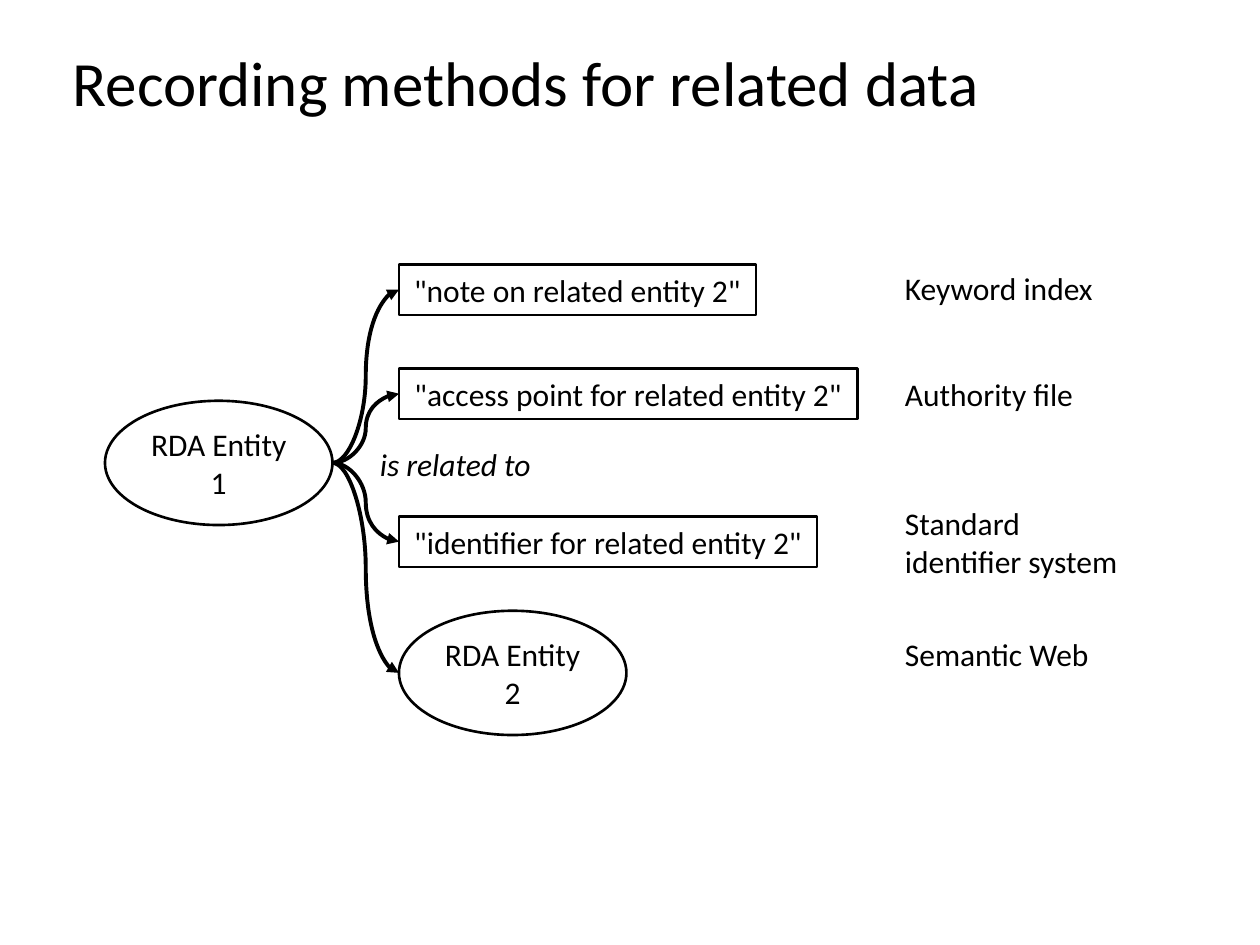
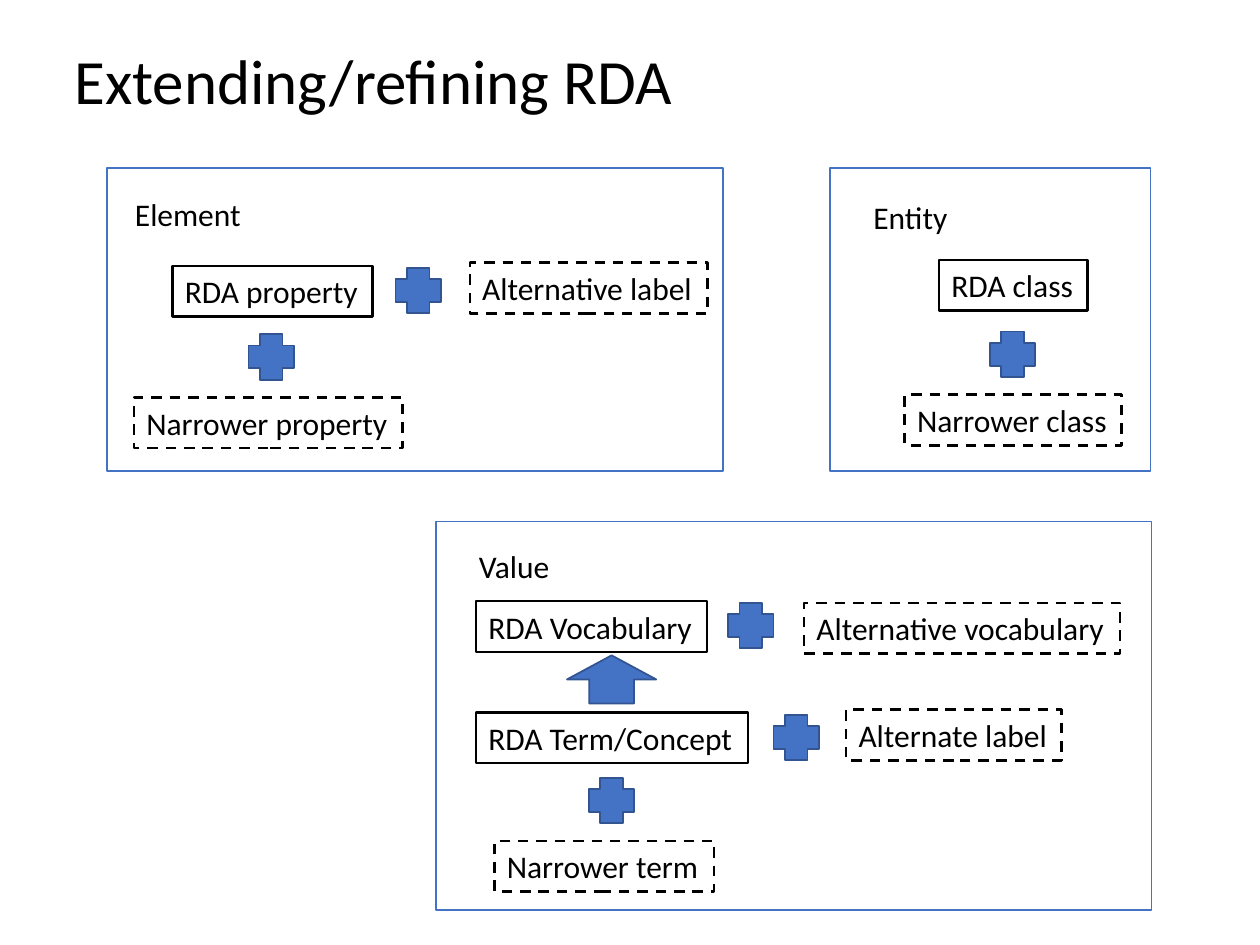
from pptx import Presentation
from pptx.dml.color import RGBColor
from pptx.enum.dml import MSO_LINE_DASH_STYLE as DASH
from pptx.enum.shapes import MSO_CONNECTOR as CONNECTOR, MSO_SHAPE as SHAPE
from pptx.enum.text import MSO_ANCHOR as ANCHOR, MSO_AUTO_SIZE as AUTO_SIZE, PP_ALIGN as ALIGN
from pptx.oxml.ns import qn
from pptx.util import Pt
from lxml.etree import SubElement

COLORS = {"ink": "000000", "accent": "4472C4", "accent_edge": "325491"}
FONT = "Calibri"
LABEL_HEIGHT = 29
PLUS_SIZE = 26


def color(name):
    return RGBColor.from_string(COLORS[name])


def write(shape, text, size=18, align=ALIGN.LEFT, italic=False, wrap=False):
    frame = shape.text_frame
    frame.word_wrap = wrap
    frame.auto_size = AUTO_SIZE.SHAPE_TO_FIT_TEXT
    frame.text = text
    for paragraph in frame.paragraphs:
        paragraph.alignment = align
        font = paragraph.runs[0].font
        font.name, font.size, font.italic = FONT, Pt(size), italic
        font.color.rgb = color("ink")


def add_text(shapes, text, left, top, width, height=LABEL_HEIGHT, **style):
    box = shapes.add_textbox(Pt(left), Pt(top), Pt(width), Pt(height))
    write(box, text, **style)


def add_outline(shapes, kind, box, line="ink", weight=1.5, fill=None):
    shape = shapes.add_shape(kind, *map(Pt, box))
    shape.shadow.inherit = False
    if fill:
        shape.fill.solid()
        shape.fill.fore_color.rgb = color(fill)
    else:
        shape.fill.background()
    shape.line.color.rgb = color(line)
    shape.line.width = Pt(weight)
    return shape


def add_label(shapes, text, left, top, width, dashed=False, align=ALIGN.LEFT):
    label = add_outline(shapes, SHAPE.RECTANGLE, (left, top, width, LABEL_HEIGHT))
    label.text_frame.vertical_anchor = ANCHOR.MIDDLE
    if dashed:
        label.line.dash_style = DASH.DASH
    write(label, text, align=align)
    return label


def add_entity(shapes, number, left, top, width=130, height=71):
    entity = add_outline(shapes, SHAPE.OVAL, (left, top, width, height))
    entity.text_frame.vertical_anchor = ANCHOR.MIDDLE
    write(entity, f"RDA Entity\n{number}", align=ALIGN.CENTER)
    return entity


def add_relation(shapes, start, end):
    relation = shapes.add_connector(CONNECTOR.CURVE, *map(Pt, start + end))
    relation.line.color.rgb = color("ink")
    relation.line.width = Pt(2.25)
    SubElement(relation.line._get_or_add_ln(), qn("a:tailEnd"), type="triangle")
    SubElement(relation._element.spPr, qn("a:effectLst"))


def add_titled_slide(deck, title, left, top, width):
    slide = deck.slides.add_slide(deck.slide_layouts[6])
    add_text(slide.shapes, title, left, top, width, 51, size=36)
    return slide.shapes


def add_relation_diagram(shapes, left, top):
    """Entity 1 on the left, fanning out to four ways of recording entity 2."""
    target_left = left + 168
    source = (left + 130, top + 113.5)

    # Entities
    add_entity(shapes, 1, left, top + 78)
    add_entity(shapes, 2, target_left, top + 198)
    add_relation(shapes, source, (target_left, top + 233.5))
    add_text(shapes, "is related to", left + 150, top + 99.5, 101, italic=True)

    # Recorded strings
    for text, offset, width in [
        ('"note on related entity 2"', 0, 204),
        ('"access point for related entity 2"', 59.5, 262),
        ('"identifier for related entity 2"', 144, 239),
    ]:
        add_label(shapes, text, target_left, top + offset, width, align=ALIGN.CENTER)
        add_relation(shapes, source, (target_left, top + offset + LABEL_HEIGHT / 2))


def add_uses(shapes, left, top):
    for text, offset, width, height in [
        ("Keyword index", 0, 123, LABEL_HEIGHT),
        ("Authority file", 60.5, 112, LABEL_HEIGHT),
        ("Standard identifier system", 134.5, 137.5, 51),
        ("Semantic Web", 209.5, 121, LABEL_HEIGHT),
    ]:
        add_text(shapes, text, left, top + offset, width, height, wrap=height > LABEL_HEIGHT)


def add_panel(shapes, box, heading, rda_labels, extensions, pluses, arrow=None):
    """A framed group; every part is placed relative to the frame's corner."""
    left, top = box[:2]
    panel = shapes.add_group_shape().shapes
    add_outline(panel, SHAPE.RECTANGLE, box, "accent", 1)

    # Heading and labels
    text, x, y, width = heading
    add_text(panel, text, left + x, top + y, width)
    for labels, dashed in ((rda_labels, False), (extensions, True)):
        for text, x, y, width in labels:
            add_label(panel, text, left + x, top + y, width, dashed)

    # Plus signs and arrow
    symbols = [(SHAPE.CROSS, x, y, PLUS_SIZE, PLUS_SIZE) for x, y in pluses]
    if arrow:
        symbols.append((SHAPE.UP_ARROW, *arrow))
    for kind, x, y, width, height in symbols:
        add_outline(panel, kind, (left + x, top + y, width, height),
                    "accent_edge", 1, fill="accent")


def add_recording_slide(deck):
    shapes = add_titled_slide(deck, "Recording methods for related data", 34.5, 21.5, 537)
    add_relation_diagram(shapes, 60, 151)
    add_uses(shapes, 510, 150)


def add_extending_slide(deck):
    shapes = add_titled_slide(deck, "Extending/refining RDA", 35.5, 20, 360)
    add_panel(
        shapes, (61, 96, 352, 173), ("Element", 9, 12, 75.5),
        rda_labels=[("RDA property", 37.5, 56, 114.5)],
        extensions=[("Alternative label", 207.5, 54, 136),
                    ("Narrower property", 15.5, 131, 153.5)],
        pluses=[(165, 57), (81, 95)],
    )
    add_panel(
        shapes, (474.5, 96, 183, 173), ("Entity", 17.5, 13.5, 57.5),
        rda_labels=[("RDA class", 62, 52.5, 85)],
        extensions=[("Narrower class", 42.5, 129.5, 124)],
        pluses=[(91, 93.5)],
    )
    add_panel(
        shapes, (249, 298, 409, 222), ("Value", 17.5, 11, 55.5),
        rda_labels=[("RDA Vocabulary", 23, 45.5, 132),
                    ("RDA Term/Concept", 23, 109, 155.5)],
        extensions=[("Alternative vocabulary", 210.5, 46.5, 180.5),
                    ("Alternate label", 234.5, 107.5, 123),
                    ("Narrower term", 33.5, 182.5, 125.5)],
        pluses=[(167, 46.5), (193, 110.5), (87.5, 146.5)],
        arrow=(75, 76.5, 51, 27.5),
    )


def main():
    deck = Presentation()
    deck.slide_width, deck.slide_height = Pt(720), Pt(540)
    add_recording_slide(deck)
    add_extending_slide(deck)
    deck.save("out.pptx")


if __name__ == "__main__":
    main()
